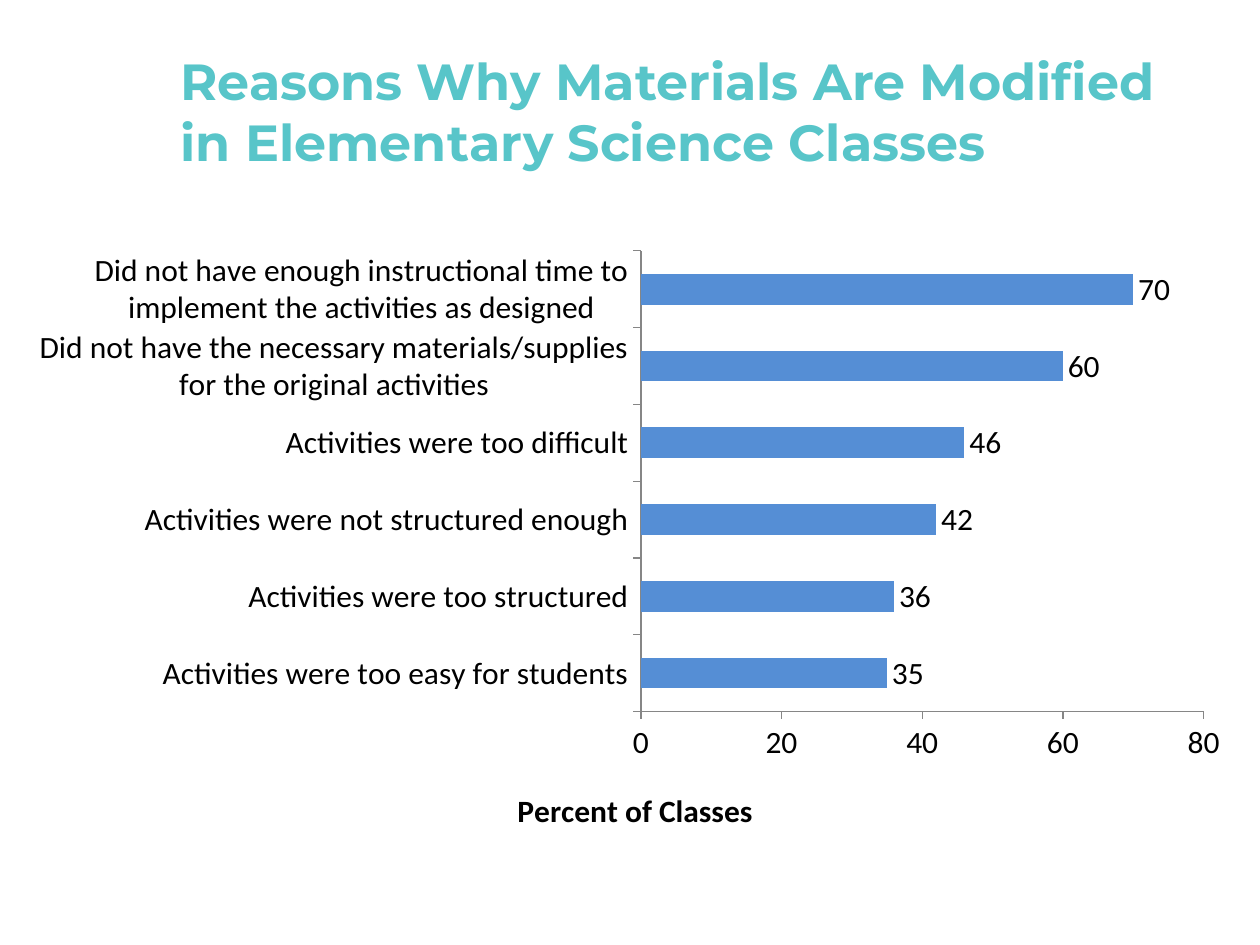
from lxml.etree import SubElement
from pptx import Presentation
from pptx.chart.data import CategoryChartData
from pptx.dml.color import RGBColor
from pptx.enum.chart import XL_CHART_TYPE as ChartType
from pptx.enum.chart import XL_LABEL_POSITION as LabelPos
from pptx.enum.chart import XL_TICK_MARK as Tick
from pptx.enum.text import MSO_ANCHOR as Anchor
from pptx.oxml.ns import qn
from pptx.util import Pt

# Content
TITLE = "Reasons Why Materials Are Modified in Elementary Science Classes"
AXIS_TITLE = "Percent of Classes"
REASONS = [  # bottom bar first
    ("Activities were too easy for students", 35),
    ("Activities were too structured", 36),
    ("Activities were not structured enough", 42),
    ("Activities were too difficult", 46),
    ("Did not have the necessary materials/supplies for the original activities", 60),
    ("Did not have enough instructional time to implement the activities as designed", 70),
]
COLORS = {"title": "58C5C9", "bar": "558ED5", "text": "000000", "axis": "868686"}

# Places in px, at 126 px to the inch
SLIDE = (1260, 945)
TITLE_BOX = (168, 32, 1029, 158)
CHART_BOX = (21, 231, 1218, 609)
PLOT_BOX = (641, 251, 563, 467)
AXIS_TITLE_AT = (512, 791)


def px(n):
    return round(n * 914400 / 126)


def rgb(name):
    return RGBColor.from_string(COLORS[name])


def set_font(font, size=18, color="text", name="Calibri", bold=False):
    font.size, font.name, font.bold = Pt(size), name, bold
    font.color.rgb = rgb(color)


def write(tf, text, **fmt):
    r = tf.paragraphs[0].add_run()
    r.text = text
    set_font(r.font, **fmt)


def manual_layout(parent, after, box, inner=False):
    """Place a chart part at a px box, as fractions of the chart."""
    for old in parent.findall(qn("c:layout")):
        parent.remove(old)
    layout = SubElement(parent, qn("c:layout"))
    if after is None:
        parent.insert(0, layout)
    else:
        after.addnext(layout)
    manual = SubElement(layout, qn("c:manualLayout"))
    left, top, width, height = CHART_BOX
    fractions = [(box[0] - left) / width, (box[1] - top) / height]
    fractions += [n / whole for n, whole in zip(box[2:], (width, height))]
    entries = [("layoutTarget", "inner")] if inner else []
    entries += [("xMode", "edge"), ("yMode", "edge")]
    entries += [(k, f"{f:.3f}") for k, f in zip("xywh", fractions)]
    for tag, val in entries:
        SubElement(manual, qn(f"c:{tag}")).set("val", val)


prs = Presentation()
prs.slide_width, prs.slide_height = map(px, SLIDE)
slide = prs.slides.add_slide(prs.slide_layouts[6])

# Bar chart
data = CategoryChartData()
data.categories = [reason for reason, _ in REASONS]
data.add_series("Series 1", [percent for _, percent in REASONS])
chart = slide.shapes.add_chart(
    ChartType.BAR_CLUSTERED, *map(px, CHART_BOX), data).chart
chart.has_legend = chart.has_title = False
set_font(chart.font)

plot = chart.plots[0]
plot.gap_width = 150
plot.vary_by_categories = False
fill = plot.series[0].format.fill
fill.solid()
fill.fore_color.rgb = rgb("bar")
plot.has_data_labels = True
labels = plot.data_labels
labels.show_value = True
labels.position = LabelPos.OUTSIDE_END
set_font(labels.font)

# Axes
cat_axis, val_axis = chart.category_axis, chart.value_axis
for axis in (cat_axis, val_axis):
    axis.has_major_gridlines = False
    axis.major_tick_mark, axis.minor_tick_mark = Tick.OUTSIDE, Tick.NONE
    axis.format.line.color.rgb = rgb("axis")
    axis.format.line.width = Pt(0.75)
    set_font(axis.tick_labels.font)
val_axis.minimum_scale, val_axis.maximum_scale = 0, 80
val_axis.major_unit = 20
axis_title = val_axis.axis_title
write(axis_title.text_frame, AXIS_TITLE, bold=True)

title_xml = axis_title._element
manual_layout(title_xml, title_xml.find(qn("c:tx")), AXIS_TITLE_AT)
manual_layout(chart._chartSpace.chart.plotArea, None, PLOT_BOX, inner=True)

# Slide title
tf = slide.shapes.add_textbox(*map(px, TITLE_BOX)).text_frame
tf.word_wrap = True
tf.vertical_anchor = Anchor.MIDDLE
write(tf, TITLE, size=29, color="title", name="Montserrat", bold=True)

prs.save("out.pptx")
